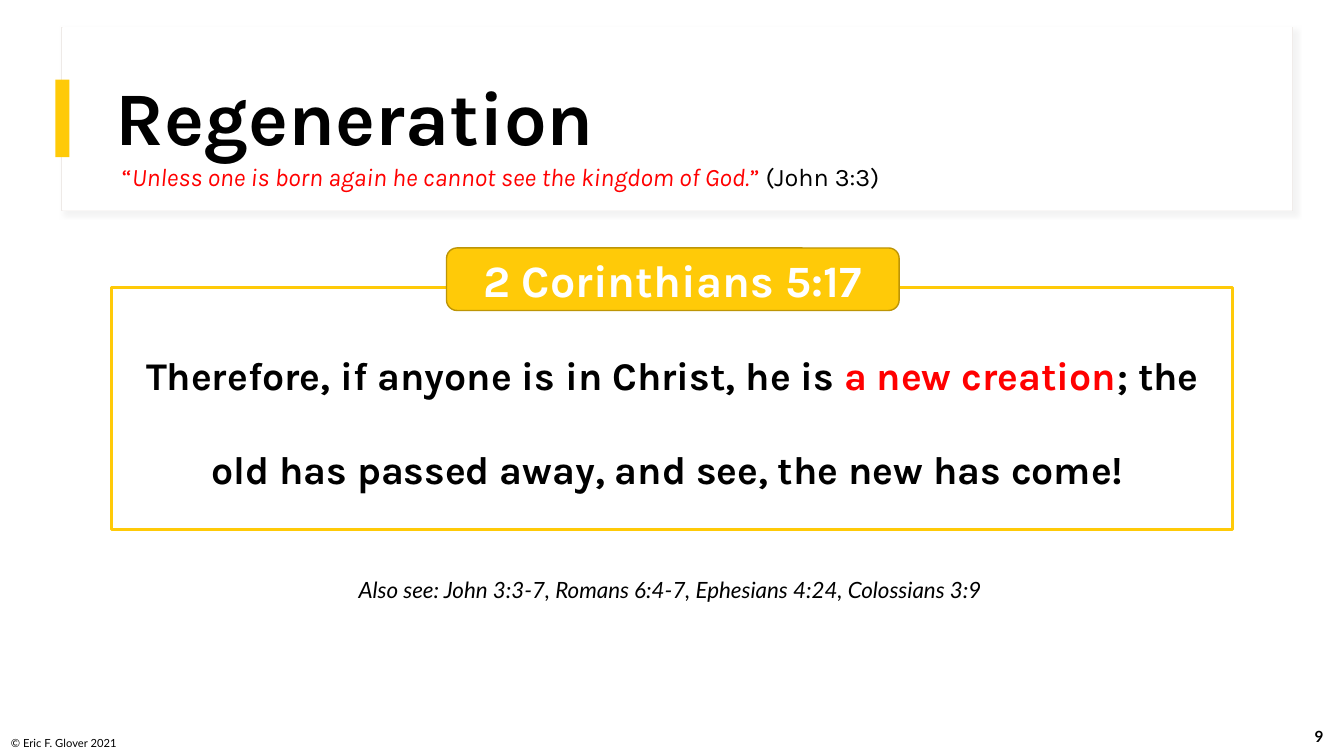
import pptx
import pptx.util
import pptx.dml.color
import pptx.enum.shapes
import pptx.enum.text
import lxml.etree
from dataclasses import dataclass

Pt = pptx.util.Pt
RGB = pptx.dml.color.RGBColor.from_string
Kind = pptx.enum.shapes.MSO_SHAPE
Align = pptx.enum.text.PP_ALIGN
Anchor = pptx.enum.text.MSO_ANCHOR


@dataclass(frozen=True)
class Theme:
    gold: str = "FFCA08"
    edge: str = "BD9506"
    rule: str = "EEEAE7"
    shade: str = "D9D9D9"
    white: str = "FFFFFF"
    black: str = "000000"
    red: str = "FF0000"
    head: str = "Karla"
    body: str = "Lato"
    title: int = 54
    label: int = 32
    verse: int = 28
    quote: int = 18
    refs: int = 16
    page: int = 11
    credit: int = 8


theme = Theme()
deck = pptx.Presentation()
deck.slide_width, deck.slide_height = Pt(960), Pt(540)
slide = deck.slides.add_slide(deck.slide_layouts[6])


def draw(kind, box, fill=None, line=None, width=1):
    shape = slide.shapes.add_shape(kind, *map(Pt, box))
    shape.shadow.inherit = False
    if fill:
        shape.fill.solid()
        shape.fill.fore_color.rgb = RGB(fill)
    else:
        shape.fill.background()
    if line:
        shape.line.color.rgb = RGB(line)
        shape.line.width = Pt(width)
    else:
        shape.line.fill.background()
    return shape


def write(shape, runs, size, face, bold=False, align=Align.LEFT, anchor=Anchor.MIDDLE):
    frame = shape.text_frame
    frame.word_wrap = True
    frame.vertical_anchor = anchor
    para = frame.paragraphs[0]
    para.alignment = align
    para.font.size = Pt(size)
    para.font.name = face
    para.font.bold = bold
    for text, color, slant in runs:
        run = para.add_run()
        run.text = text
        run.font.color.rgb = RGB(color)
        run.font.italic = slant
    return para


card = draw(Kind.RECTANGLE, (43.92, 19.44, 879.12, 131.04), theme.white, theme.rule, 0.75)
space = "http://schemas.openxmlformats.org/drawingml/2006/main"
effects = card._element.spPr.find(f"{{{space}}}effectLst")
effects.append(lxml.etree.fromstring(
    f'<a:outerShdw xmlns:a="{space}" blurRad="{Pt(4)}" dist="{Pt(3)}" dir="2700000">'
    f'<a:srgbClr val="{theme.shade}"><a:alpha val="30000"/></a:srgbClr></a:outerShdw>'))
draw(Kind.RECTANGLE, (44.64, 19.44, 878.4, 131.04), theme.white)
draw(Kind.RECTANGLE, (39.6, 56.88, 10.08, 55.44), theme.gold)

panel = draw(Kind.RECTANGLE, (79.92, 205.2, 800.64, 172.8), None, theme.gold, 2.25)
panel.text_frame.margin_top = 0
panel.text_frame.margin_bottom = Pt(14.4)
verse = write(panel, [
    ("Therefore, if anyone is in Christ, he is ", theme.black, False),
    ("a new creation", theme.red, False),
    ("; the old has passed away, and see, the new has come! ", theme.black, False),
], theme.verse, theme.head, True, Align.CENTER)
verse.line_spacing = 2.0
verse.space_before = Pt(10)

label = draw(Kind.ROUNDED_RECTANGLE, (318.96, 177.12, 323.28, 44.64), theme.gold, theme.edge)
write(label, [("2 Corinthians 5:17", theme.white, False)],
      theme.label, theme.head, True, Align.CENTER)

notes = [
    ((75.6, 40.32, 800.64, 92.88), [("Regeneration", theme.black, False)],
     theme.title, theme.head, True, Align.LEFT, Anchor.MIDDLE),
    ((79.92, 111.6, 833.04, 28.8), [
        ("“", theme.red, False),
        ("Unless one is born again he cannot see the kingdom of God.", theme.red, True),
        ("”", theme.red, False),
        (" (John 3:3)", theme.black, False),
    ], theme.quote, theme.head, False, Align.LEFT, Anchor.TOP),
    ((104.4, 408.24, 752.4, 26.64),
     [("Also see: John 3:3-7, Romans 6:4-7, Ephesians 4:24, Colossians 3:9 ", theme.black, True)],
     theme.refs, theme.body, False, Align.CENTER, Anchor.TOP),
    ((924.48, 511.92, 35.28, 28.8), [("9", theme.black, False)],
     theme.page, theme.body, True, Align.CENTER, Anchor.MIDDLE),
    ((0.72, 519.12, 113.04, 20.16), [("© Eric F. Glover 2021", theme.black, False)],
     theme.credit, theme.body, False, Align.LEFT, Anchor.BOTTOM),
]
for box, runs, size, face, bold, align, anchor in notes:
    para = write(slide.shapes.add_textbox(*map(Pt, box)), runs, size, face, bold, align, anchor)
    if size == theme.title:
        para.line_spacing = 0.9
    if size == theme.page:
        para.space_after = Pt(6)

deck.save("out.pptx")
